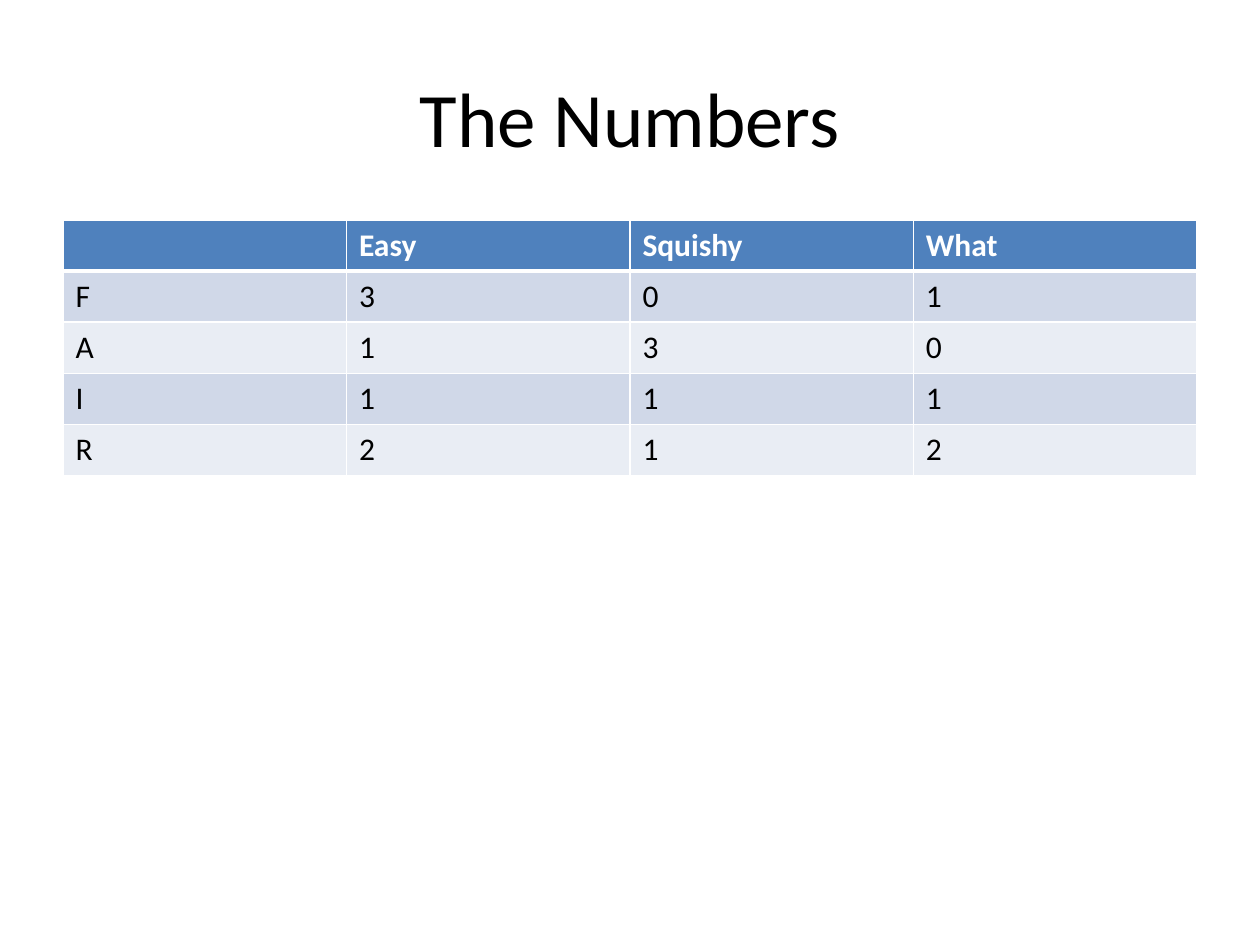
from lxml import etree
from pptx import Presentation
from pptx.dml.color import RGBColor
from pptx.enum.text import MSO_ANCHOR, PP_ALIGN
from pptx.oxml.ns import qn
from pptx.util import Pt

PX = 914400 // 126
LEFT, CENTER = PP_ALIGN.LEFT, PP_ALIGN.CENTER
MIDDLE = MSO_ANCHOR.MIDDLE
TITLE_ONLY = 5

ROWS = [
    ["", "Easy", "Squishy", "What"],
    ["F", "3", "0", "1"],
    ["A", "1", "3", "0"],
    ["I", "1", "1", "1"],
    ["R", "2", "1", "2"],
]


def px(*nums):
    return [n * PX for n in nums]


def color(code):
    return RGBColor.from_string(code)


def write(frame, text, font="Calibri", size=18, ink="000000", bold=False, align=LEFT):
    para = frame.paragraphs[0]
    para.alignment = align
    run = para.add_run()
    run.text = text
    run.font.name, run.font.size, run.font.bold = font, Pt(size), bold
    run.font.color.rgb = color(ink)


def edge(cell, side, width, code):
    props = cell._tc.get_or_add_tcPr()
    line = etree.SubElement(props, qn("a:ln" + side), w=str(Pt(width)))
    fill = etree.SubElement(line, qn("a:solidFill"))
    etree.SubElement(fill, qn("a:srgbClr"), val=code)


class Deck:
    head = "4F81BD"
    bands = ["D0D8E8", "E9EDF4"]
    white = "FFFFFF"

    def __init__(self, wide, high):
        self.prs = Presentation()
        self.prs.slide_width, self.prs.slide_height = px(wide, high)
        self.slide = self.prs.slides.add_slide(self.prs.slide_layouts[TITLE_ONLY])

    def title(self, text, x, y, w, h):
        box = self.slide.shapes.title
        box.left, box.top, box.width, box.height = px(x, y, w, h)
        box.text_frame.vertical_anchor = MIDDLE
        write(box.text_frame, text, size=44, align=CENTER)

    def table(self, rows, x, y, w, h):
        area = px(x, y, w, h)
        grid = self.slide.shapes.add_table(len(rows), len(rows[0]), *area).table
        for r, row in enumerate(rows):
            for c, text in enumerate(row):
                self.cell(grid.cell(r, c), text, r)

    def cell(self, cell, text, r):
        # Thick rule between the header and the body
        widths = {"L": 1, "R": 1, "T": 3 if r == 1 else 1, "B": 3 if r == 0 else 1}
        for side, width in widths.items():
            edge(cell, side, width, self.white)
        cell.fill.solid()
        cell.fill.fore_color.rgb = color(self.bands[(r - 1) % 2] if r else self.head)
        if text:
            write(cell.text_frame, text, ink="000000" if r else self.white, bold=r == 0)


def main():
    deck = Deck(1260, 945)
    # Heading
    deck.title("The Numbers", 63, 38, 1134, 157)
    # Score table
    deck.table(ROWS, 63, 220, 1134, 255)
    deck.prs.save("out.pptx")


if __name__ == "__main__":
    main()
